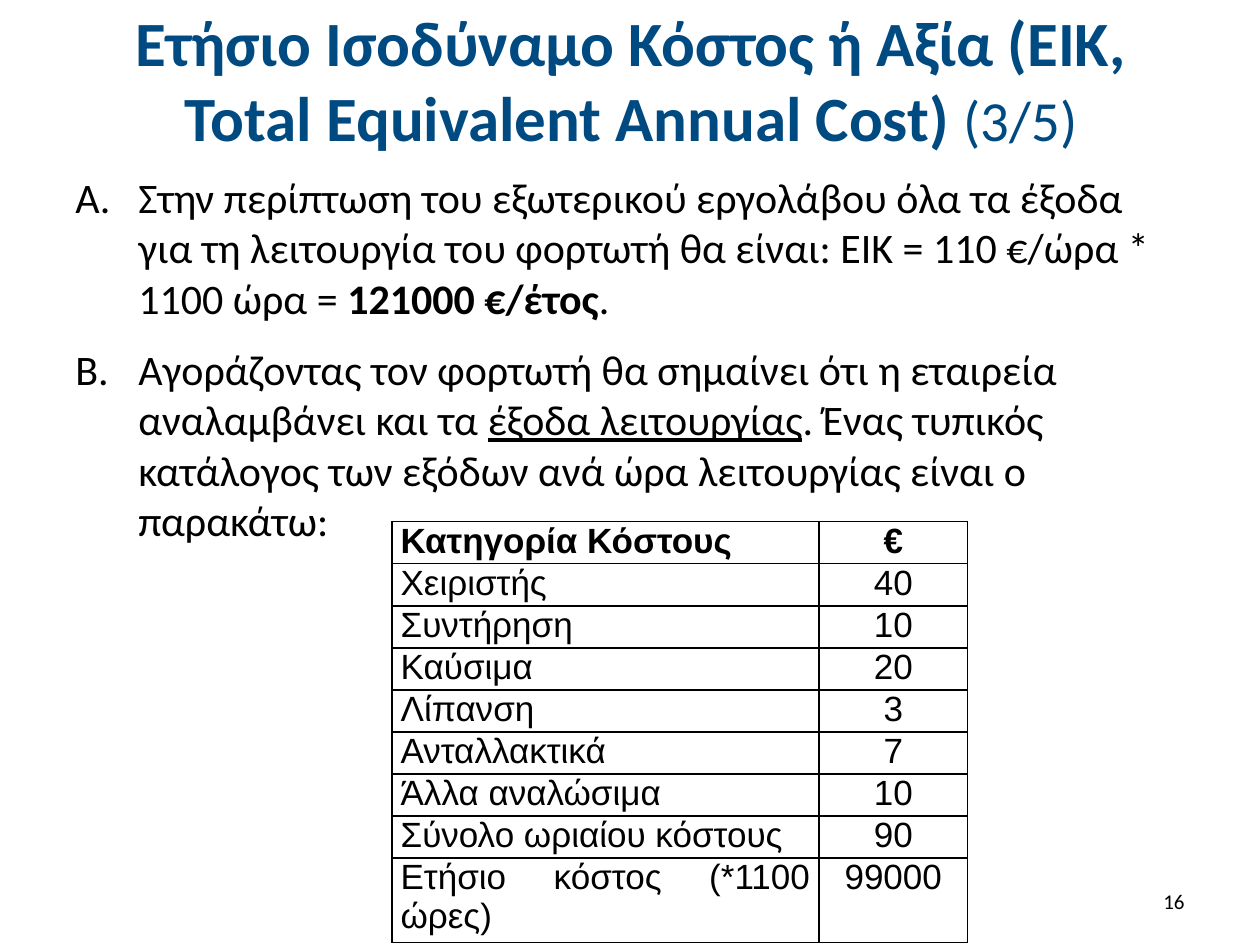
import pptx
import pptx.util
import pptx.dml.color
import pptx.enum.text
import pptx.oxml.ns
from dataclasses import dataclass
from lxml import etree

Inches = pptx.util.Inches
Pt = pptx.util.Pt
Align = pptx.enum.text.PP_ALIGN
Anchor = pptx.enum.text.MSO_ANCHOR


@dataclass
class Theme:
    blue: str = "004A82"
    black: str = "000000"
    face: str = "Calibri"
    grid: str = "Arial"
    title: float = 36
    count: float = 32.4
    body: float = 24
    cell: float = 20
    num: float = 12


theme = Theme()


def add_run(para, text, size, face=theme.face, color=theme.black, bold=False, under=False):
    run = para.add_run()
    run.text = text
    font = run.font
    font.size = Pt(size)
    font.name = face
    font.bold = bold
    if under:
        font.underline = True
    font.color.rgb = pptx.dml.color.RGBColor.from_string(color)


def add_tag(parent, name, **attrs):
    return etree.SubElement(parent, pptx.oxml.ns.qn(name), attrs)


deck = pptx.Presentation()
deck.slide_width = Inches(10)
deck.slide_height = Inches(7.5)
slide = deck.slides.add_slide(deck.slide_layouts[5])

title = slide.shapes.title
title.left, title.top = Inches(0.51), Inches(0.13)
title.width, title.height = Inches(9), Inches(0.99)
frame = title.text_frame
frame.auto_size = pptx.enum.text.MSO_AUTO_SIZE.NONE
frame.vertical_anchor = Anchor.MIDDLE
para = frame.paragraphs[0]
para.alignment = Align.CENTER
add_run(para, "Ετήσιο Ισοδύναμο Κόστος ή Αξία (ΕΙΚ, Total Equivalent Annual Cost) ",
        theme.title, color=theme.blue, bold=True)
add_run(para, "(3/5)", theme.count, color=theme.blue)

items = [
    [("Στην περίπτωση του εξωτερικού εργολάβου όλα τα έξοδα για τη λειτουργία "
      "του φορτωτή θα είναι: ΕΙΚ = 110 €/ώρα * 1100 ώρα = ", {}),
     ("121000 €/έτος", {"bold": True}),
     (".", {})],
    [("Αγοράζοντας τον φορτωτή θα σημαίνει ότι η εταιρεία αναλαμβάνει και τα ", {}),
     ("έξοδα λειτουργίας", {"under": True}),
     (". Ένας τυπικός κατάλογος των εξόδων ανά ώρα λειτουργίας είναι ο παρακάτω:", {})],
]
body = slide.shapes.add_textbox(Inches(0.5), Inches(1.31), Inches(9), Inches(3.07))
frame = body.text_frame
frame.word_wrap = True
for i, item in enumerate(items):
    para = frame.add_paragraph() if i else frame.paragraphs[0]
    props = para._p.get_or_add_pPr()
    props.set("marL", str(Inches(0.5)))
    props.set("indent", str(Inches(-0.5)))
    add_tag(props, "a:buFont", typeface="+mj-lt")
    add_tag(props, "a:buAutoNum", type="alphaUcPeriod")
    if i:
        para.space_before = Pt(12)
    for text, style in item:
        add_run(para, text, theme.body, **style)

costs = [
    ("Κατηγορία Κόστους", "€"),
    ("Χειριστής", "40"),
    ("Συντήρηση", "10"),
    ("Καύσιμα", "20"),
    ("Λίπανση", "3"),
    ("Ανταλλακτικά", "7"),
    ("Άλλα αναλώσιμα", "10"),
    ("Σύνολο ωριαίου κόστους", "90"),
    ("Ετήσιο κόστος (*1100 ώρες)", "99000"),
]
table = slide.shapes.add_table(len(costs), 2, Inches(3.11), Inches(4.14),
                               Inches(4.57), Inches(3.1)).table
table.first_row = False
table.horz_banding = False
for col, width in zip(table.columns, (3.39, 1.18)):
    col.width = Inches(width)
for r, row in enumerate(costs):
    table.rows[r].height = Inches(0.62 if r == len(costs) - 1 else 0.31)
    for c, text in enumerate(row):
        cell = table.cell(r, c)
        cell.margin_left = cell.margin_right = Inches(0.07)
        cell.margin_top = cell.margin_bottom = 0
        props = cell._tc.get_or_add_tcPr()
        for side in "LRTB":
            line = add_tag(props, "a:ln" + side, w=str(Pt(1)))
            fill = add_tag(line, "a:solidFill")
            add_tag(fill, "a:srgbClr", val=theme.black)
        cell.fill.background()
        para = cell.text_frame.paragraphs[0]
        para.alignment = Align.CENTER if c else Align.JUSTIFY
        add_run(para, text, theme.cell, face=theme.grid, bold=r == 0)

page = slide.shapes.add_textbox(Inches(7.17), Inches(6.95), Inches(2.33), Inches(0.4))
frame = page.text_frame
frame.word_wrap = True
frame.vertical_anchor = Anchor.MIDDLE
para = frame.paragraphs[0]
para.alignment = Align.RIGHT
add_run(para, "16", theme.num)

deck.save("out.pptx")
